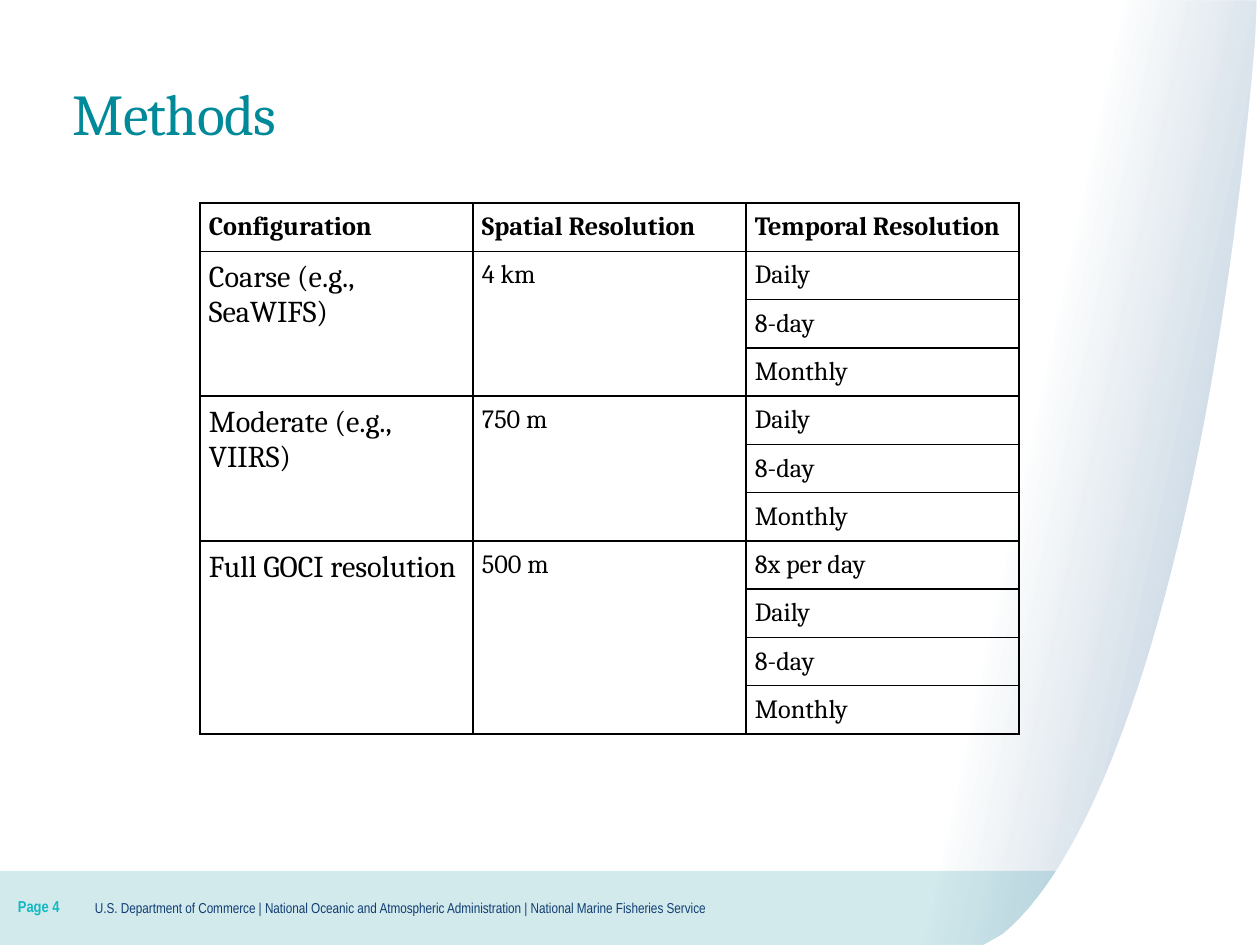
from lxml.etree import SubElement
from pptx import Presentation
from pptx.dml.color import RGBColor
from pptx.enum.shapes import MSO_SHAPE
from pptx.enum.text import MSO_ANCHOR, MSO_AUTO_SIZE, PP_ALIGN
from pptx.oxml import parse_xml
from pptx.oxml.ns import nsdecls, qn
from pptx.util import Pt

TITLE = "Methods"
HEADS = ["Configuration", "Spatial Resolution", "Temporal Resolution"]
GROUPS = [
    ("Coarse (e.g., SeaWIFS)", "4 km", ["Daily", "8-day", "Monthly"]),
    ("Moderate (e.g., VIIRS)", "750 m", ["Daily", "8-day", "Monthly"]),
    ("Full GOCI resolution", "500 m", ["8x per day", "Daily", "8-day", "Monthly"]),
]
FOOT = [
    ("Page 4", (18, 868, 77, 77), "page"),
    (" | ".join(["U.S. Department of Commerce",
                 "National Oceanic and Atmospheric Administration",
                 "National Marine Fisheries Service"]), (95, 871, 922, 74), "foot"),
]
SHEEN = [(1236, 945), (881, 944), (1099, 0), (1256, 1),
         [(1259, 440), (1217, 600), (1236, 945)]]
SWEEP = [(1257, 0), (1260, 0), (1260, 946), (982, 946), (1003, 934),
         [(1120, 837), (1216, 493), (1255, 43)]]

THEME = {
    "band": "D3EAED", "glow": "07477D", "paper": "FFFFFF", "rule": "000000",
    "title": {"name": "Cambria", "size": 33, "bold": False, "color": "008998"},
    "head": {"name": "Cambria", "size": 15, "bold": True, "color": "000000"},
    "label": {"name": "Cambria", "size": 17.3, "bold": False, "color": "000000"},
    "cell": {"name": "Cambria", "size": 15, "bold": False, "color": "000000"},
    "page": {"name": "Arial Narrow", "size": 9, "bold": True, "color": "13B9C2"},
    "foot": {"name": "Arial Narrow", "size": 8.2, "bold": False, "color": "103D72"},
}
SCALE = 914400 / 126
PAD, ROW, COL = 9, 47, 273
STEPS = 40


def emu(px):
    return round(px * SCALE)


def place(shape, box):
    for key, px in zip(("left", "top", "width", "height"), box):
        setattr(shape, key, emu(px))


def write(frame, text, kind):
    para = frame.paragraphs[0]
    para.alignment = PP_ALIGN.LEFT
    run = para.add_run()
    run.text = text
    for key, value in THEME[kind].items():
        if key == "color":
            run.font.color.rgb = RGBColor.from_string(value)
        else:
            setattr(run.font, key, Pt(value) if key == "size" else value)
    return para, run


def paint(shape, color):
    shape.shadow.inherit = False
    shape.line.fill.background()
    shape.fill.solid()
    shape.fill.fore_color.rgb = RGBColor.from_string(color)


def curve(start, ends):
    pts = [start, *ends]
    for n in range(1, STEPS + 1):
        t = n / STEPS
        mix = ((1 - t) ** 3, 3 * t * (1 - t) ** 2, 3 * t * t * (1 - t), t ** 3)
        yield tuple(sum(m * p[i] for m, p in zip(mix, pts)) for i in (0, 1))


def trace(shapes, steps, color):
    pts = []
    for step in steps:
        pts.extend(curve(pts[-1], step) if isinstance(step, list) else [step])
    build = shapes.build_freeform(*map(emu, pts[0]), scale=1.0)
    build.add_line_segments([tuple(map(emu, p)) for p in pts[1:]])
    shape = build.convert_to_shape()
    paint(shape, color)
    return shape


def fade(shape, color):
    stops = "".join(
        f'<a:gs pos="{pos}000"><a:srgbClr val="{color}"><a:alpha val="{alpha}000"/>'
        f'</a:srgbClr></a:gs>' for pos, alpha in ((42, 0), (100, 34)))
    grad = parse_xml(f'<a:gradFill {nsdecls("a")} rotWithShape="1"><a:gsLst>{stops}'
                     '</a:gsLst><a:lin ang="720000" scaled="0"/></a:gradFill>')
    props = shape._element.spPr
    props.replace(props.find(qn("a:solidFill")), grad)


def fill(cell, text, kind):
    for side in ("left", "right", "top", "bottom"):
        setattr(cell, "margin_" + side, emu(PAD))
    write(cell.text_frame, text, kind)


def edge(cell):
    cell.fill.background()
    props = cell._tc.get_or_add_tcPr()
    for n, side in enumerate("LRTB"):
        line = parse_xml(f'<a:ln{side} {nsdecls("a")} w="12700"><a:solidFill>'
                         f'<a:srgbClr val="{THEME["rule"]}"/></a:solidFill></a:ln{side}>')
        props.insert(n, line)


def draw_back(shapes):
    band = shapes.add_shape(MSO_SHAPE.RECTANGLE, 0, 0, 0, 0)
    place(band, (0, 871, 1259, 75))
    paint(band, THEME["band"])
    for text, box, kind in FOOT:
        note = shapes.add_textbox(0, 0, 0, 0)
        place(note, box)
        frame = note.text_frame
        form = {"word_wrap": True, "vertical_anchor": MSO_ANCHOR.MIDDLE,
                "margin_left": 0, "margin_right": 0, "margin_top": 0, "margin_bottom": 0}
        for key, value in form.items():
            setattr(frame, key, value)
        write(frame, text, kind)
    fade(trace(shapes, SHEEN, THEME["glow"]), THEME["glow"])
    trace(shapes, SWEEP, THEME["paper"])


def draw_title(shapes):
    title = shapes.title
    place(title, (60, 74, 1150, 86))
    form = {"vertical_anchor": MSO_ANCHOR.MIDDLE, "auto_size": MSO_AUTO_SIZE.NONE}
    for key, value in form.items():
        setattr(title.text_frame, key, value)
    para, run = write(title.text_frame, TITLE, "title")
    para.line_spacing = 0.9
    run.font._element.set("spc", "-40")
    title._element.getparent().append(title._element)


def draw_table(shapes):
    count = 1 + sum(len(times) for _, _, times in GROUPS)
    box = (200, 203, COL * len(HEADS), ROW * count)
    table = shapes.add_table(count, len(HEADS), *map(emu, box)).table
    table.first_row = table.horz_banding = False
    for col, text in enumerate(HEADS):
        table.columns[col].width = emu(COL)
        fill(table.cell(0, col), text, "head")
    top = 1
    for label, space, times in GROUPS:
        last = top + len(times) - 1
        for col, text, kind in ((0, label, "label"), (1, space, "cell")):
            table.cell(top, col).merge(table.cell(last, col))
            fill(table.cell(top, col), text, kind)
        for n, text in enumerate(times):
            fill(table.cell(top + n, 2), text, "cell")
        top = last + 1
    for row in table.rows:
        row.height = emu(ROW)
        for cell in row.cells:
            edge(cell)


def main():
    deck = Presentation()
    deck.slide_width, deck.slide_height = emu(1260), emu(945)
    shapes = deck.slides.add_slide(deck.slide_layouts[5]).shapes
    draw_back(shapes)
    draw_title(shapes)
    draw_table(shapes)
    deck.save("out.pptx")


if __name__ == "__main__":
    main()
